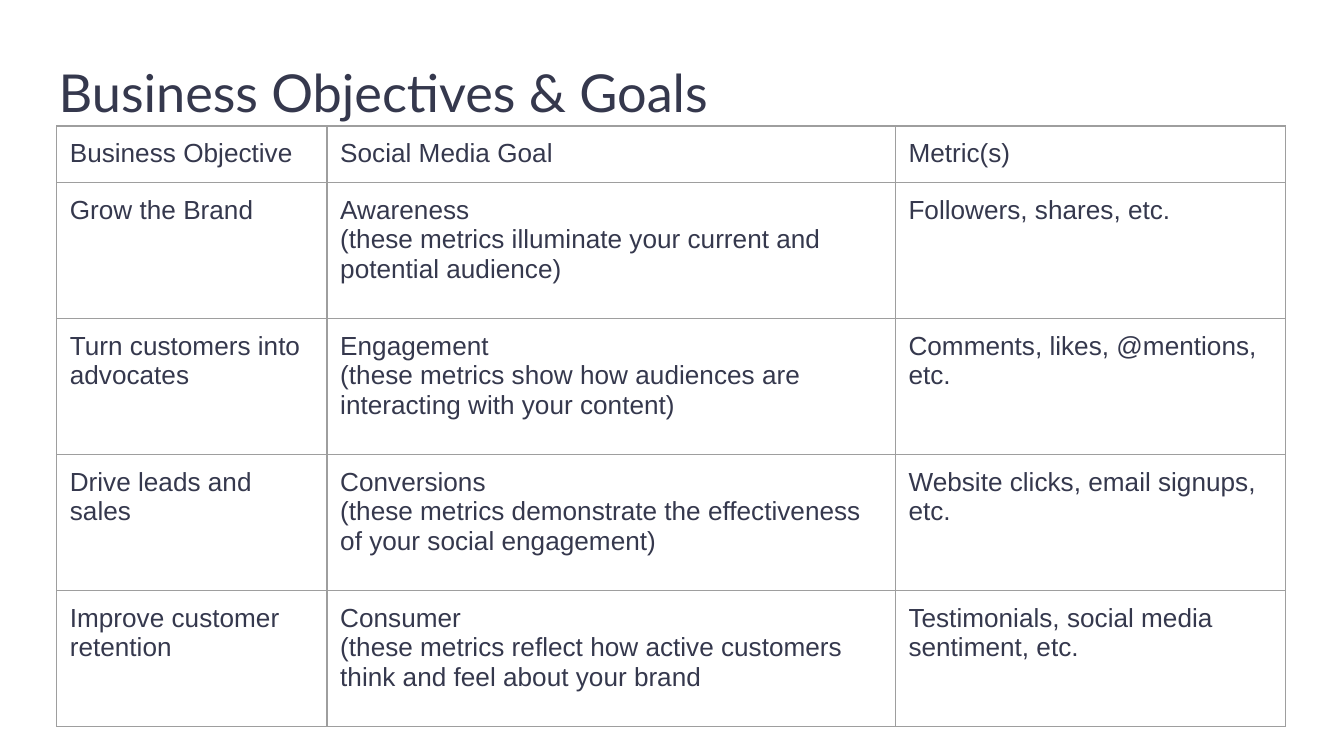
from dataclasses import dataclass

from lxml import etree
from pptx import Presentation
from pptx.dml.color import RGBColor
from pptx.enum.text import MSO_ANCHOR, MSO_AUTO_SIZE, PP_ALIGN
from pptx.oxml.ns import qn
from pptx.util import Cm, Pt

TOP = MSO_ANCHOR.TOP
NO_FIT = MSO_AUTO_SIZE.NONE
LEFT = PP_ALIGN.LEFT

COLORS = {"text": "35384D", "border": "9E9E9E", "background": "FFFFFF"}
INSET = Cm(0.25)
MARGINS = {
    "margin_left": INSET,
    "margin_top": INSET,
    "margin_right": INSET,
    "margin_bottom": INSET,
    "vertical_anchor": TOP,
}
TITLE_FONT = {"name": "Lato", "size": Pt(28), "bold": False}
CELL_FONT = {"name": "Arial", "size": Pt(14), "bold": False}
COLUMN_WIDTHS = (Cm(5.11), Cm(10.74), Cm(7.37))
HEADER_HEIGHT = Cm(1.07)
ROW_HEIGHT = Cm(2.57)


@dataclass
class TableRow:
    objective: str
    goal: str
    metrics: str


ROWS = [
    TableRow("Business Objective", "Social Media Goal", "Metric(s)"),
    TableRow(
        "Grow the Brand",
        "Awareness\n(these metrics illuminate your current and potential audience)",
        "Followers, shares, etc.",
    ),
    TableRow(
        "Turn customers into advocates",
        "Engagement\n(these metrics show how audiences are interacting with your content)",
        "Comments, likes, @mentions, etc.",
    ),
    TableRow(
        "Drive leads and sales",
        "Conversions\n(these metrics demonstrate the effectiveness of your social engagement)",
        "Website clicks, email signups, etc.",
    ),
    TableRow(
        "Improve customer retention",
        "Consumer\n(these metrics reflect how active customers think and feel about your brand",
        "Testimonials, social media sentiment, etc.",
    ),
]


def apply_format(target, values: dict) -> None:
    for name, value in values.items():
        setattr(target, name, value)


def write_text(frame, text: str, font: dict) -> None:
    frame.text = text
    for para in frame.paragraphs:
        para.alignment = LEFT
        for span in para.runs:
            apply_format(span.font, font)
            span.font.color.rgb = RGBColor.from_string(COLORS["text"])


def add_borders(cell) -> None:
    properties = cell._tc.get_or_add_tcPr()
    for position, side in enumerate(("lnL", "lnR", "lnT", "lnB")):
        line = etree.Element(qn(f"a:{side}"), w=str(Pt(0.75)))
        fill = etree.SubElement(line, qn("a:solidFill"))
        etree.SubElement(fill, qn("a:srgbClr"), val=COLORS["border"])
        properties.insert(position, line)


def add_title(page, text: str) -> None:
    title = page.shapes.title
    apply_format(
        title,
        {"left": Cm(0.86), "top": Cm(0.89), "width": Cm(23.24), "height": Cm(1.9)},
    )
    frame = title.text_frame
    apply_format(frame, {**MARGINS, "word_wrap": True, "auto_size": NO_FIT})
    write_text(frame, text, TITLE_FONT)


def add_goal_table(page, rows: list[TableRow]) -> None:
    heights = [HEADER_HEIGHT] + [ROW_HEIGHT] * (len(rows) - 1)
    table = page.shapes.add_table(
        len(rows), len(COLUMN_WIDTHS), Cm(1.07), Cm(2.38),
        sum(COLUMN_WIDTHS), sum(heights),
    ).table
    apply_format(table, {"first_row": False, "horz_banding": False})
    for column, width in zip(table.columns, COLUMN_WIDTHS):
        column.width = width
    for table_row, height, row in zip(table.rows, heights, rows):
        table_row.height = height
        for cell, text in zip(table_row.cells, (row.objective, row.goal, row.metrics)):
            apply_format(cell, MARGINS)
            cell.fill.background()
            write_text(cell.text_frame, text, CELL_FONT)
            add_borders(cell)


def main() -> None:
    deck = Presentation()
    deck.slide_width, deck.slide_height = Cm(25.4), Cm(14.29)
    page = deck.slides.add_slide(deck.slide_layouts[5])
    page.background.fill.solid()
    page.background.fill.fore_color.rgb = RGBColor.from_string(COLORS["background"])
    add_title(page, "Business Objectives & Goals")
    add_goal_table(page, ROWS)
    deck.save("out.pptx")


if __name__ == "__main__":
    main()
